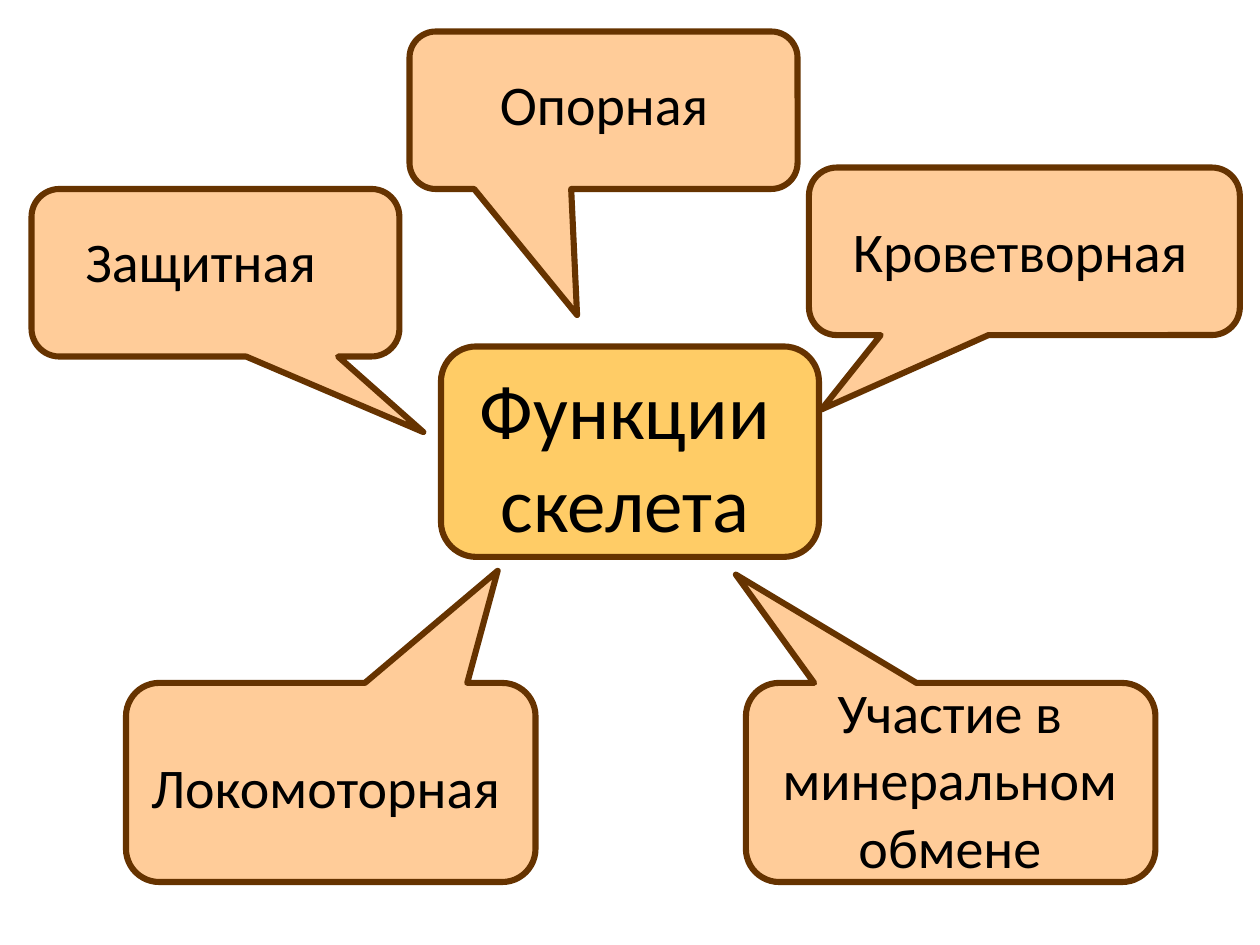
import pptx
import pptx.util
import pptx.dml.color
import pptx.enum.shapes
import pptx.enum.text

Inches = pptx.util.Inches
KIND = pptx.enum.shapes.MSO_SHAPE
ALIGN = pptx.enum.text.PP_ALIGN
LEFT, MID = ALIGN.LEFT, ALIGN.CENTER

# Content: words, text box, alignment, callout box, tip of its tail
TITLE = "Функции скелета"
ROLES = [
    ("Кроветворная", (6.67, 1.67, 3.08, 0.63), LEFT,
     (6.42, 1.33, 3.42, 1.33), (6.52, 3.25)),
    ("Участие в минеральном обмене", (6, 5.33, 3.08, 1.72), MID,
     (5.92, 5.42, 3.25, 1.58), (5.84, 4.56)),
    ("Опорная", (3.67, 0.5, 2.25, 0.63), MID,
     (3.25, 0.25, 3.08, 1.25), (4.58, 2.5)),
    ("Локомоторная", (1, 5.92, 3.17, 0.63), MID,
     (1, 5.42, 3.25, 1.58), (3.95, 4.53)),
    ("Защитная", (0.58, 1.75, 2.25, 0.63), LEFT,
     (0.25, 1.5, 2.92, 1.33), (3.36, 3.43)),
]


def color(code):
    return pptx.dml.color.RGBColor.from_string(code)


def draw(kind, box, fill):
    shape = slide.shapes.add_shape(kind, *map(Inches, box))
    shape.shadow.inherit = False
    shape.fill.solid()
    shape.fill.fore_color.rgb = color(fill)
    shape.line.color.rgb = color("663300")
    shape.line.width = pptx.util.Pt(3.5)
    return shape


def write(shape, text, size, align):
    frame = shape.text_frame
    frame.text = text
    frame.word_wrap = True
    frame.auto_size = pptx.enum.text.MSO_AUTO_SIZE.NONE
    frame.vertical_anchor = pptx.enum.text.MSO_ANCHOR.TOP
    para = frame.paragraphs[0]
    para.alignment = align
    para.line_spacing = 1.0
    para.font.name = "Calibri"
    para.font.size = pptx.util.Pt(size)
    para.font.color.rgb = color("000000")


deck = pptx.Presentation()
deck.slide_width, deck.slide_height = Inches(10), Inches(7.5)
slide = deck.slides.add_slide(deck.slide_layouts[5])

# Centre: panel with the title in front of it
panel = draw(KIND.FLOWCHART_ALTERNATE_PROCESS, (3.5, 2.75, 3, 1.67), "FFCC66")
title = slide.shapes.title
title.left, title.top, title.width, title.height = map(
    Inches, (3.42, 2.83, 3.08, 1.58))
write(title, TITLE, 44, MID)
panel._element.addnext(title._element)

# Callouts: the tail is set as an offset from the centre, in box sizes
for _, _, _, box, tip in ROLES:
    x, y, w, h = box
    call = draw(KIND.ROUNDED_RECTANGULAR_CALLOUT, box, "FFCC99")
    call.adjustments[0] = (tip[0] - x) / w - 0.5
    call.adjustments[1] = (tip[1] - y) / h - 0.5

# Labels
for text, area, align, _, _ in ROLES:
    write(slide.shapes.add_textbox(*map(Inches, area)), text, 32, align)

deck.save("out.pptx")
